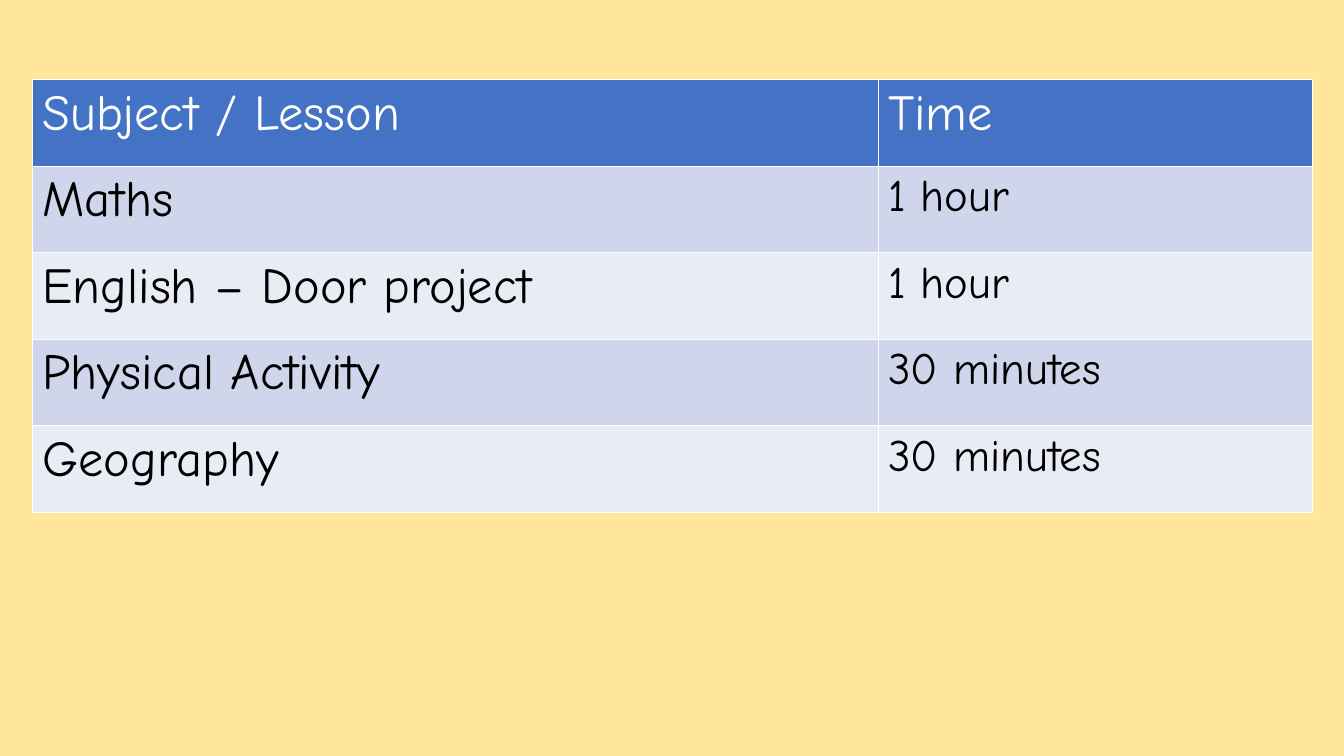
"""Build a slide with the day's lessons and the time for each."""
import pptx
import pptx.dml.color
import pptx.util
from pptx.util import Cm

COLOURS = {
    "background": "FFE699",
    "header": "4472C4",
    "odd": "CFD5EA",
    "even": "E9EBF5",
    "header_text": "FFFFFF",
    "text": "000000",
}
FONT = "Comic Neue"
HEADINGS = ("Subject / Lesson", "Time")
LESSONS = [
    ("Maths", "1 hour"),
    ("English – Door project", "1 hour"),
    ("Physical Activity", "30 minutes"),
    ("Geography", "30 minutes"),
]
COLUMN_WIDTHS = (Cm(21.31), Cm(10.95))
ROW_HEIGHT = Cm(2.18)


def paint(fill, colour):
    fill.solid()
    fill.fore_color.rgb = pptx.dml.color.RGBColor.from_string(COLOURS[colour])


def write_cell(cell, wording, size, text_colour, fill_colour):
    paint(cell.fill, fill_colour)
    run = cell.text_frame.paragraphs[0].add_run()
    run.text = wording
    run.font.name = FONT
    run.font.size = pptx.util.Pt(size)
    run.font.bold = False
    paint(run.font.fill, text_colour)


def add_timetable(slide, left, top):
    rows = [HEADINGS, *LESSONS]
    timetable = slide.shapes.add_table(
        len(rows), len(HEADINGS), left, top,
        sum(COLUMN_WIDTHS), ROW_HEIGHT * len(rows),
    ).table
    for column, width in zip(timetable.columns, COLUMN_WIDTHS):
        column.width = width
    for row in timetable.rows:
        row.height = ROW_HEIGHT

    for column, heading in enumerate(HEADINGS):
        write_cell(timetable.cell(0, column), heading, 36, "header_text", "header")
    for row, (subject, duration) in enumerate(LESSONS, start=1):
        band = "odd" if row % 2 else "even"
        write_cell(timetable.cell(row, 0), subject, 36, "text", band)
        write_cell(timetable.cell(row, 1), duration, 32, "text", band)


def main():
    deck = pptx.Presentation()
    deck.slide_width, deck.slide_height = Cm(33.87), Cm(19.05)
    slide = deck.slides.add_slide(deck.slide_layouts[6])
    paint(slide.background.fill, "background")
    add_timetable(slide, Cm(0.82), Cm(2.01))
    deck.save("out.pptx")


if __name__ == "__main__":
    main()
